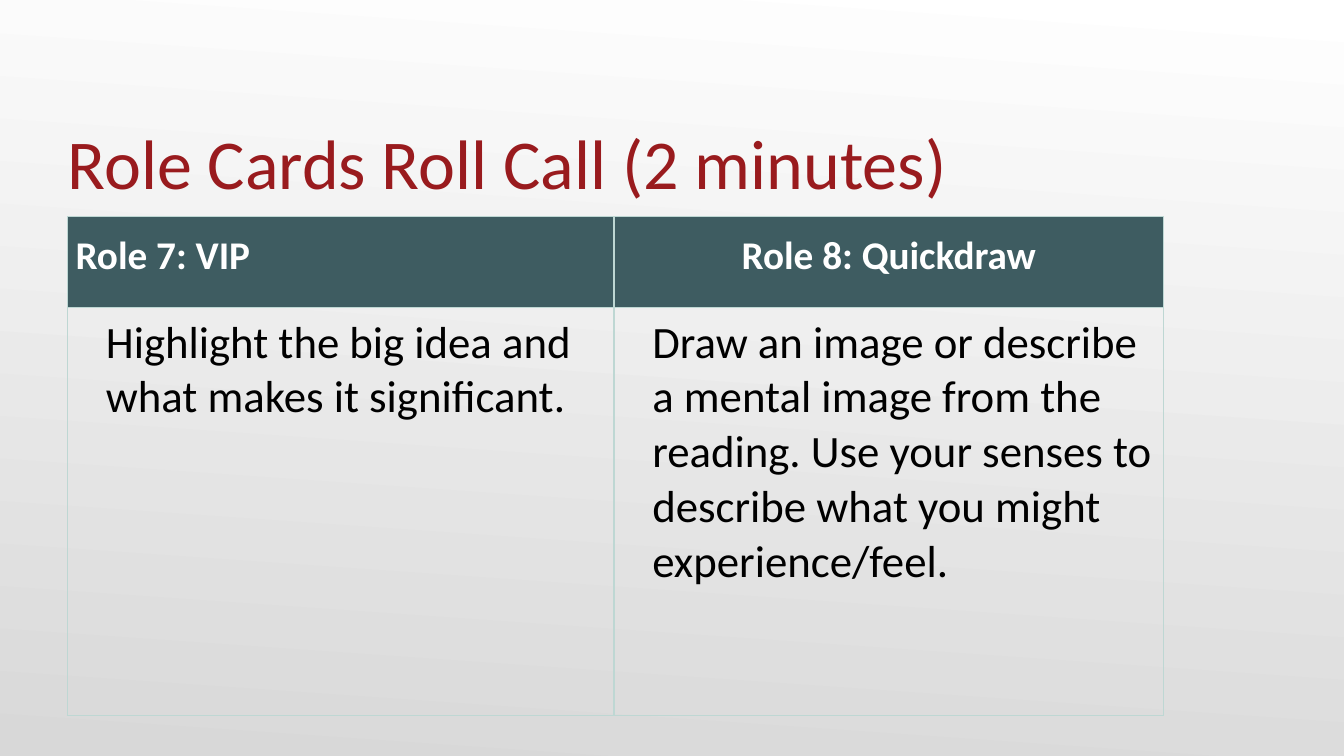
from dataclasses import dataclass

from lxml.etree import SubElement
from pptx import Presentation
from pptx.dml.color import RGBColor as RGB
from pptx.enum.text import MSO_ANCHOR as Anchor, PP_ALIGN as Align
from pptx.oxml.ns import qn
from pptx.util import Inches, Pt

TITLE = "Role Cards Roll Call (2 minutes)"
ROLES = [
    ("Role 7: VIP", Align.LEFT,
     "Highlight the big idea and what makes it significant."),
    ("Role 8: Quickdraw", Align.CENTER,
     "Draw an image or describe a mental image from the reading. "
     "Use your senses to describe what you might experience/feel."),
]
COLUMN_WIDTHS = (5.42, 5.45)
ROW_HEIGHTS = (0.9, 4.05)
LEFT, TABLE_TOP = 0.67, 2.15


@dataclass(frozen=True)
class Theme:
    font: str = "Calibri"
    title: str = "991B1E"
    header: str = "3E5C61"
    header_text: str = "FFFFFF"
    body_text: str = "000000"
    border: str = "BED7D3"
    backdrop: tuple = ("FFFFFF", "D8D8D8")
    title_size: int = 50
    header_size: int = 28
    body_size: int = 32


THEME = Theme()


def write(paragraph, words, size, color, bold=False):
    run = paragraph.add_run()
    run.text = words
    run.font.name = THEME.font
    run.font.size = Pt(size)
    run.font.bold = bold
    run.font.color.rgb = RGB.from_string(color)


def outline(cell):
    properties = cell._tc.get_or_add_tcPr()
    for position, side in enumerate(("lnL", "lnR", "lnT", "lnB")):
        line = SubElement(properties, qn(f"a:{side}"), w=str(Pt(1)))
        fill = SubElement(line, qn("a:solidFill"))
        SubElement(fill, qn("a:srgbClr"), val=THEME.border)
        properties.insert(position, line)


def prepare(cell):
    cell.margin_left = cell.margin_right = Inches(0.08)
    cell.margin_top = cell.margin_bottom = Inches(0.08)
    outline(cell)
    return cell.text_frame.paragraphs[0]


def add_title(slide):
    heading = slide.shapes.add_textbox(
        Inches(LEFT), Inches(0.77), Inches(12), Inches(1.25)).text_frame
    heading.word_wrap = True
    heading.vertical_anchor = Anchor.BOTTOM
    heading.margin_left = heading.margin_right = heading.margin_bottom = 0
    heading.margin_top = Inches(0.05)
    write(heading.paragraphs[0], TITLE, THEME.title_size, THEME.title)


def add_roles(slide):
    roles = slide.shapes.add_table(
        len(ROW_HEIGHTS), len(ROLES), Inches(LEFT), Inches(TABLE_TOP),
        Inches(sum(COLUMN_WIDTHS)), Inches(sum(ROW_HEIGHTS))).table
    roles.horz_banding = False
    for row, height in zip(roles.rows, ROW_HEIGHTS):
        row.height = Inches(height)
    for index, (role, align, task) in enumerate(ROLES):
        roles.columns[index].width = Inches(COLUMN_WIDTHS[index])

        header = roles.cell(0, index)
        header.fill.solid()
        header.fill.fore_color.rgb = RGB.from_string(THEME.header)
        label = prepare(header)
        label.alignment = align
        label.line_spacing = 1.15
        write(label, role, THEME.header_size, THEME.header_text, True)

        body = roles.cell(1, index)
        body.fill.background()
        description = prepare(body)
        description._p.get_or_add_pPr().set("marL", str(Inches(0.3)))
        write(description, task, THEME.body_size, THEME.body_text)


def main():
    deck = Presentation()
    deck.slide_width, deck.slide_height = Inches(13.33), Inches(7.5)
    slide = deck.slides.add_slide(deck.slide_layouts[6])
    backdrop = slide.background.fill
    backdrop.gradient()
    backdrop.gradient_angle = 266
    for stop, color in zip(backdrop.gradient_stops, THEME.backdrop):
        stop.color.rgb = RGB.from_string(color)
    add_title(slide)
    add_roles(slide)
    deck.save("out.pptx")


if __name__ == "__main__":
    main()
